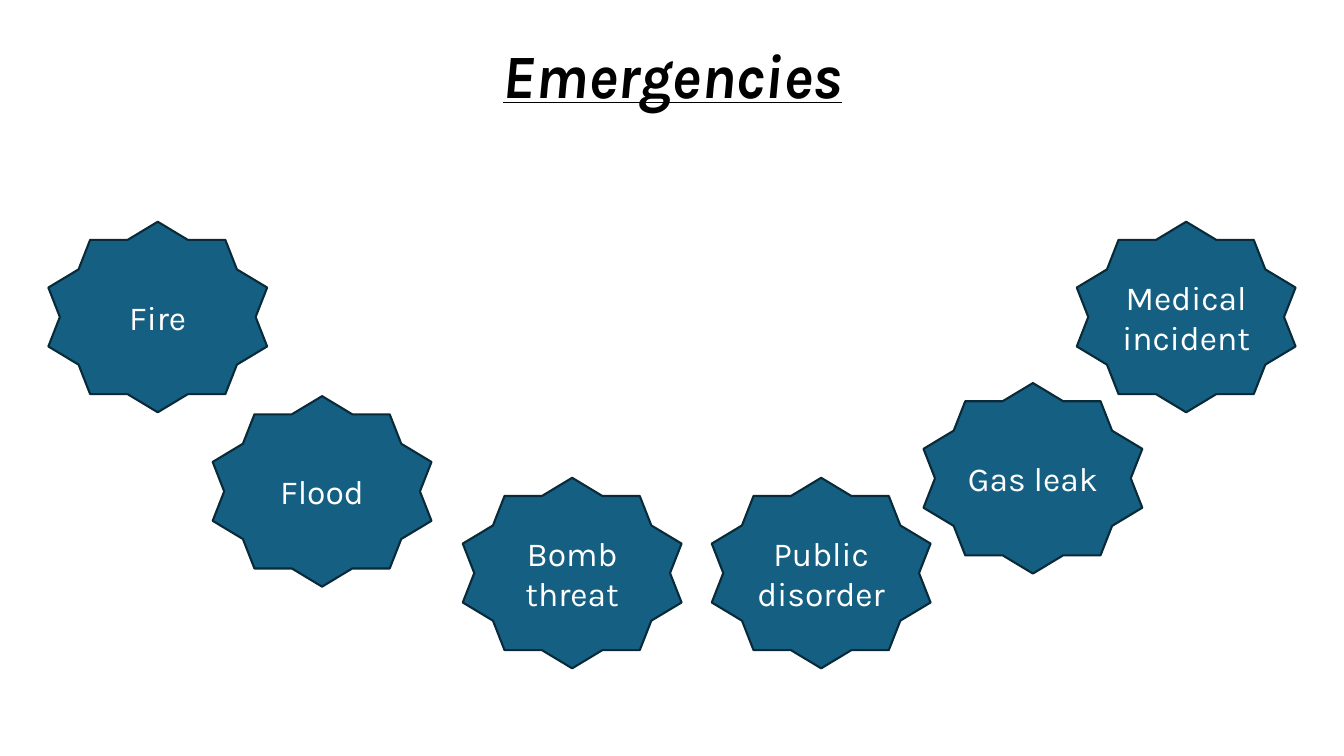
from dataclasses import dataclass

from pptx import Presentation
from pptx.dml.color import RGBColor
from pptx.enum.shapes import MSO_SHAPE
from pptx.enum.text import MSO_ANCHOR, MSO_AUTO_SIZE, PP_ALIGN
from pptx.slide import Slide
from pptx.text.text import TextFrame
from pptx.util import Emu, Pt

STAR = MSO_SHAPE.STAR_10_POINT
CENTER = PP_ALIGN.CENTER
TOP, MIDDLE = MSO_ANCHOR.TOP, MSO_ANCHOR.MIDDLE
NO_AUTOFIT = MSO_AUTO_SIZE.NONE

EMU_PER_PX = 9144  # 100 px to the inch
FONT = "Karla"
COLORS = {"title": "000000", "label": "FFFFFF", "star": "156082", "outline": "092A39"}
STAR_WIDTH, STAR_HEIGHT = 217, 189


@dataclass(frozen=True)
class Emergency:
    name: str
    left: int
    top: int


EMERGENCIES = [
    Emergency("Fire", 48, 220),
    Emergency("Flood", 211, 393),
    Emergency("Public disorder", 706, 474),
    Emergency("Bomb threat", 459, 474),
    Emergency("Medical incident", 1068, 220),
    Emergency("Gas leak", 916, 380),
]


def px(length: int) -> Emu:
    return Emu(length * EMU_PER_PX)


def color(name: str) -> RGBColor:
    return RGBColor.from_string(COLORS[name])


def write(frame: TextFrame, text: str, size: int, color_name: str, anchor: MSO_ANCHOR):
    """Put one centred line of text in the frame and return its run."""
    frame.word_wrap = True
    frame.auto_size = NO_AUTOFIT
    frame.vertical_anchor = anchor
    para = frame.paragraphs[0]
    para.alignment = CENTER
    span = para.add_run()
    span.text = text
    span.font.name = FONT
    span.font.size = Pt(size)
    span.font.color.rgb = color(color_name)
    return span


def add_title(page: Slide, text: str) -> None:
    title = page.shapes.title
    title.left, title.top = px(92), px(40)
    title.width, title.height = px(1150), px(102)
    span = write(title.text_frame, text, 44, "title", TOP)
    span.font.bold = span.font.italic = span.font.underline = True
    title.text_frame.paragraphs[0].line_spacing = 0.9


def add_star(page: Slide, emergency: Emergency) -> None:
    star = page.shapes.add_shape(
        STAR, px(emergency.left), px(emergency.top), px(STAR_WIDTH), px(STAR_HEIGHT)
    )
    star.shadow.inherit = False
    star.fill.solid()
    star.fill.fore_color.rgb = color("star")
    star.line.color.rgb = color("outline")
    star.line.width = Pt(1.5)
    write(star.text_frame, emergency.name, 24, "label", MIDDLE)


def main() -> None:
    deck = Presentation()
    deck.slide_width, deck.slide_height = px(1333), px(750)
    title_only = deck.slide_layouts[5]
    page = deck.slides.add_slide(title_only)
    add_title(page, "Emergencies")
    for emergency in EMERGENCIES:
        add_star(page, emergency)
    deck.save("out.pptx")


if __name__ == "__main__":
    main()
